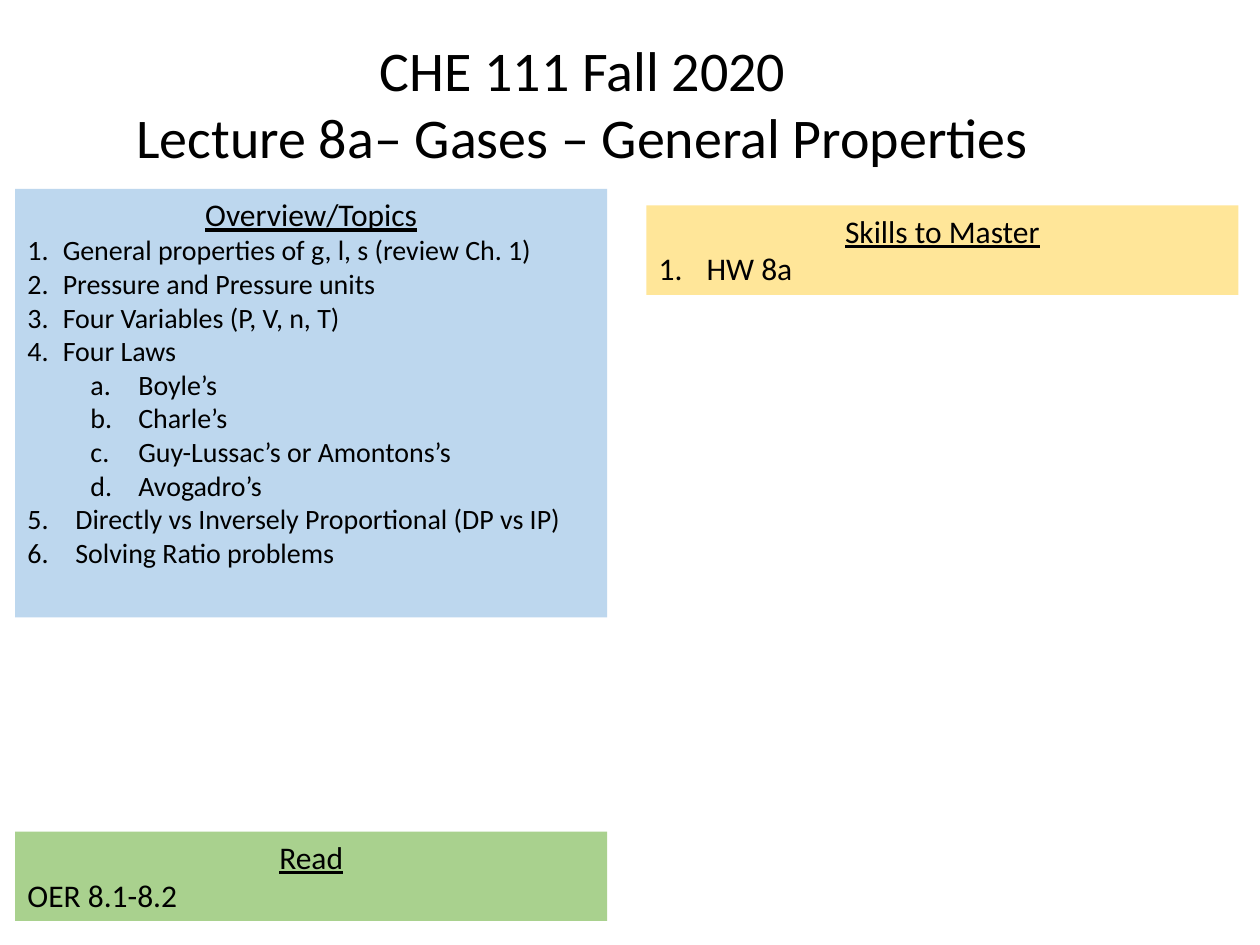
from lxml import etree
from pptx import Presentation
from pptx.dml.color import RGBColor
from pptx.enum import text
from pptx.oxml import ns
from pptx.util import Inches, Pt

BLACK = RGBColor(0x00, 0x00, 0x00)
BLUE = RGBColor(0xBD, 0xD7, 0xEE)
YELLOW = RGBColor(0xFF, 0xE6, 0x99)
GREEN = RGBColor(0xA9, 0xD1, 0x8E)
FONT = "Calibri"

# Content
TITLE = ["CHE 111 Fall 2020", "Lecture 8a– Gases – General Properties"]

# List styles: level, left margin, hanging indent, numbering
PLAIN = None
TOPIC = (0, 0.28, 0.28, "arabicPeriod")
LAW = (1, 0.88, 0.38, "alphaLcPeriod")
WIDE = (0, 0.38, 0.38, "arabicPeriod")

# Panels: heading, fill, (left, top, height), item size, items
PANEL_WIDTH = 4.7
PANELS = [
    ("Overview/Topics", BLUE, (0.12, 1.5, 3.4), 16, [
        ("General properties of g, l, s (review Ch. 1)", TOPIC),
        ("Pressure and Pressure units", TOPIC),
        ("Four Variables (P, V, n, T)", TOPIC),
        ("Four Laws", TOPIC),
        ("Boyle’s", LAW),
        ("Charle’s", LAW),
        ("Guy-Lussac’s or Amontons’s", LAW),
        ("Avogadro’s", LAW),
        ("Directly vs Inversely Proportional (DP vs IP)", WIDE),
        ("Solving Ratio problems", WIDE),
    ]),
    ("Skills to Master", YELLOW, (5.13, 1.63, 0.71), 18, [("HW 8a", WIDE)]),
    ("Read", GREEN, (0.12, 6.6, 0.71), 18, [("OER 8.1-8.2", PLAIN)]),
]


def write(paragraph, words, size, align, underline=False):
    paragraph.alignment = align
    run = paragraph.add_run()
    run.text = words
    run.font.name = FONT
    run.font.size = Pt(size)
    run.font.color.rgb = BLACK
    run.font.underline = underline


def number(paragraph, style):
    level, margin, hang, scheme = style
    paragraph.level = level
    props = paragraph._p.get_or_add_pPr()
    props.set("marL", str(Inches(margin)))
    props.set("indent", str(-Inches(hang)))
    bullet_font = etree.SubElement(props, ns.qn("a:buFont"))
    bullet_font.set("typeface", "+mj-lt")
    etree.SubElement(props, ns.qn("a:buAutoNum")).set("type", scheme)


def prepare(frame, wrap):
    frame.word_wrap = wrap
    frame.auto_size = text.MSO_AUTO_SIZE.NONE
    frame.vertical_anchor = text.MSO_ANCHOR.TOP


prs = Presentation()
prs.slide_width, prs.slide_height = Inches(10), Inches(7.5)
slide = prs.slides.add_slide(prs.slide_layouts[5])

# Title
title = slide.shapes.title
title.left, title.top = Inches(0.95), Inches(0.23)
title.width, title.height = Inches(7.35), Inches(1.18)
prepare(title.text_frame, wrap=False)
for i, line in enumerate(TITLE):
    frame = title.text_frame
    paragraph = frame.add_paragraph() if i else frame.paragraphs[0]
    write(paragraph, line, 32, text.PP_ALIGN.CENTER)

# Panels
for heading, fill, (left, top, height), size, items in PANELS:
    panel = slide.shapes.add_textbox(
        Inches(left), Inches(top), Inches(PANEL_WIDTH), Inches(height))
    panel.fill.solid()
    panel.fill.fore_color.rgb = fill
    frame = panel.text_frame
    prepare(frame, wrap=True)
    write(frame.paragraphs[0], heading, 18, text.PP_ALIGN.CENTER, underline=True)
    for words, style in items:
        paragraph = frame.add_paragraph()
        write(paragraph, words, size, text.PP_ALIGN.LEFT)
        if style:
            number(paragraph, style)

prs.save("out.pptx")
